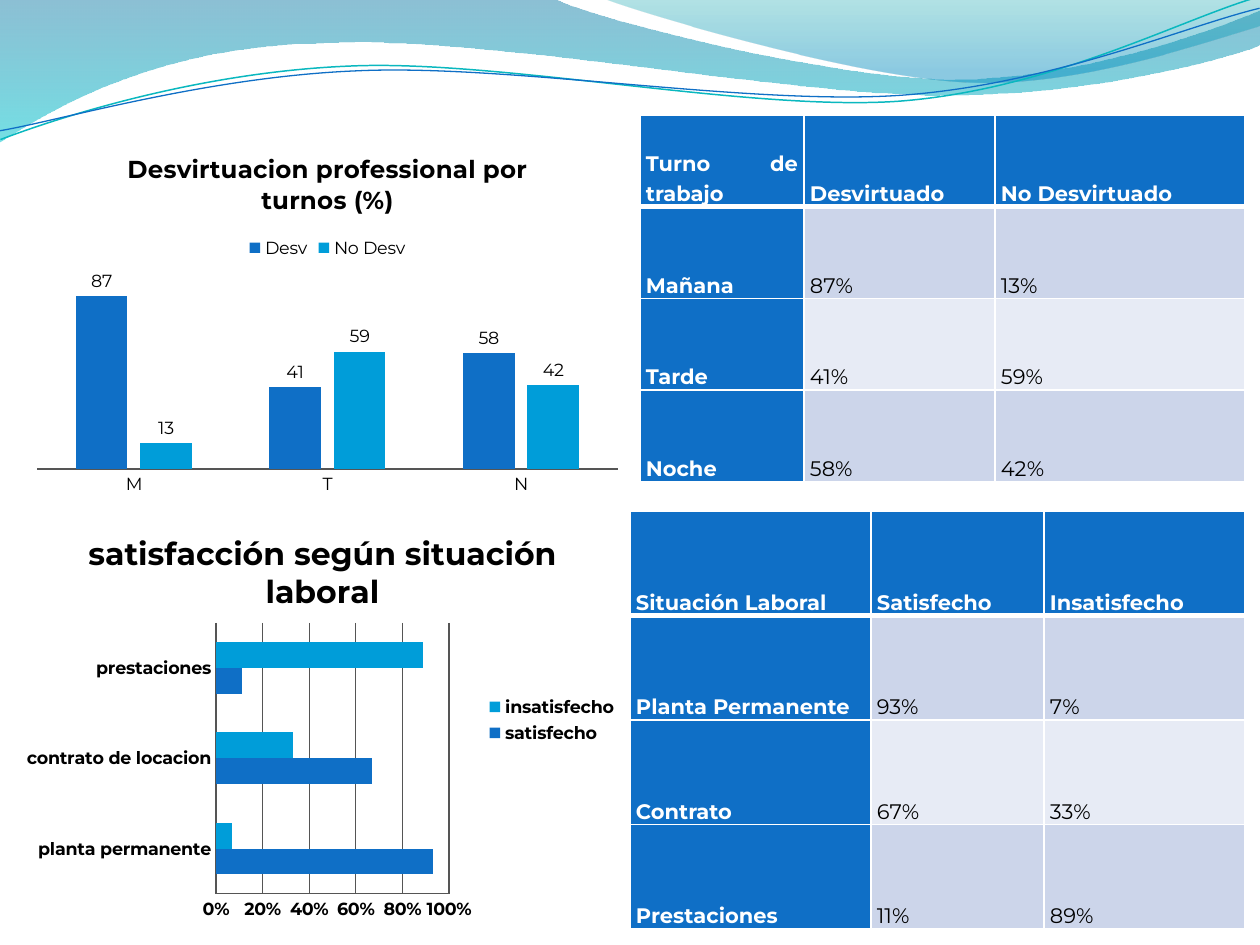
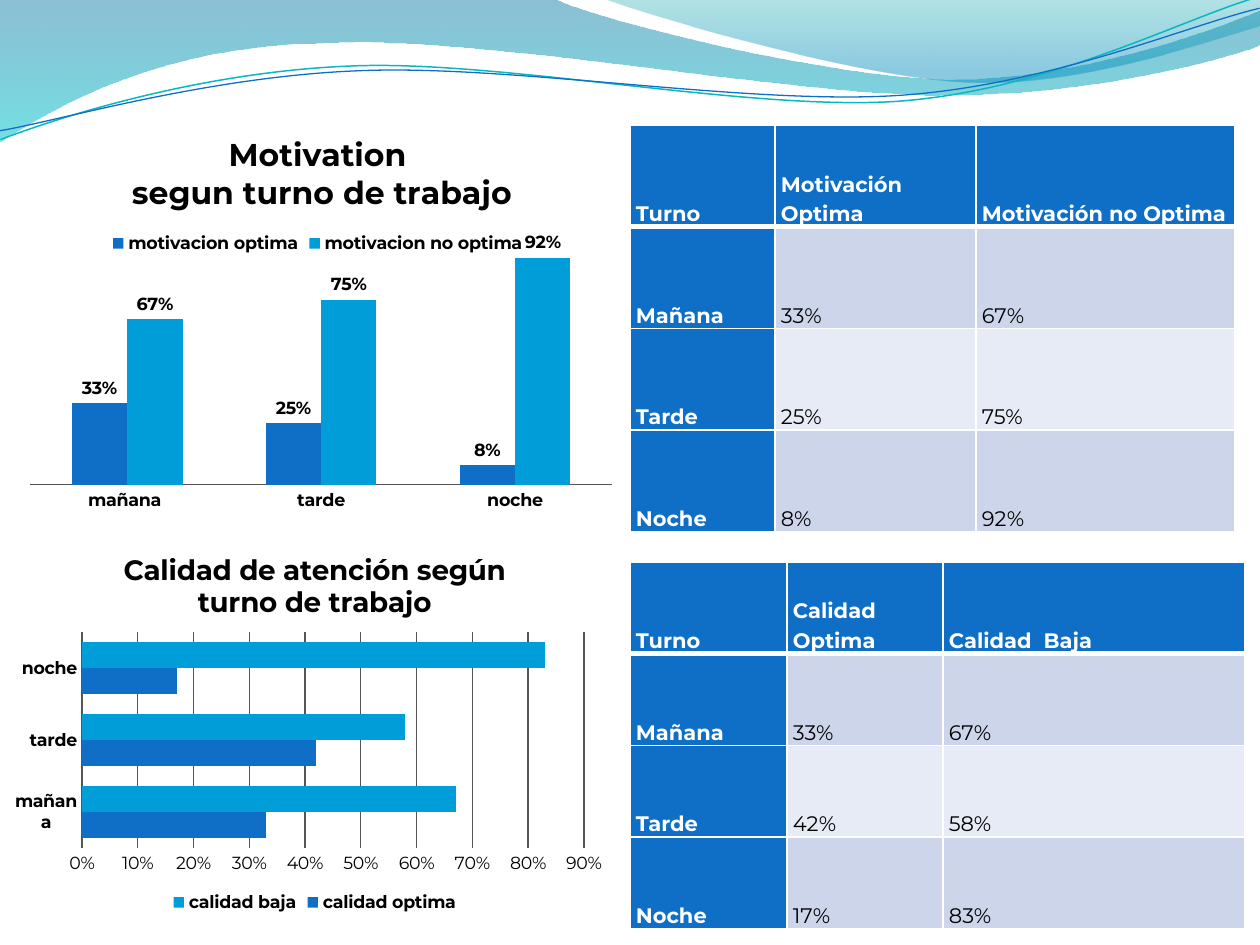
from lxml.etree import SubElement
from pptx import Presentation
from pptx.chart.data import CategoryChartData
from pptx.dml.color import RGBColor
from pptx.enum.chart import XL_CHART_TYPE, XL_LABEL_POSITION, XL_LEGEND_POSITION, XL_TICK_MARK
from pptx.enum.text import MSO_ANCHOR, PP_ALIGN
from pptx.oxml.ns import qn
from pptx.util import Emu, Pt

BLUE = RGBColor(0x0F, 0x6F, 0xC6)
SKY = RGBColor(0x00, 0x9D, 0xD9)
TEAL = RGBColor(0x0A, 0xB8, 0xBF)
DEEP = RGBColor(0x00, 0x74, 0xA1)
AQUA = RGBColor(0x00, 0xC6, 0xCF)
SEA = RGBColor(0x00, 0xA1, 0xA9)
LAKE = RGBColor(0x00, 0x8B, 0xBF)
BAND = RGBColor(0xCC, 0xD5, 0xEA)
PALE = RGBColor(0xE7, 0xEB, 0xF5)
GREY = RGBColor(0x55, 0x55, 0x55)
WHITE = RGBColor(0xFF, 0xFF, 0xFF)
BLACK = RGBColor(0x00, 0x00, 0x00)
FONT = "Montserrat"
TILT = 357.3

FILLS = [
    ([(0, 0), (554, -1), (600, 21, 837, 79, 955, 79), (1075, 79, 1207, 33, 1260, 11),
      (1261, 45), (1239, 55, 1096, 96, 940, 95), (784, 95, 481, 35, 324, 43),
      (163, 45, 58, 105, -1, 142)],
     [(0, DEEP, 45), (1, AQUA, 55)]),
    ([(604, -1), (641, 14, 859, 78, 969, 82), (1079, 87, 1211, 40, 1260, 26), (1260, 0)],
     [(0, SEA, 30), (0.8, LAKE, 45)]),
]
LINES = [
    ([(-2, 110), (59, 90, 200, 52, 350, 53), (499, 53, 745, 117, 896, 114),
      (1049, 110, 1184, 45, 1260, 27)], TEAL, 0.85),
    ([(-2, 101), (57, 94, 207, 57, 357, 58), (509, 58, 750, 112, 902, 108),
      (1052, 104, 1188, 52, 1262, 38)], BLUE, 0.75),
]


def px(num):
    return Emu(round(num * 914400 / 126))


def style(font, size=10, color=BLACK, bold=False):
    font.name = FONT
    font.size = Pt(size)
    font.bold = bold
    font.color.rgb = color


def put(frame, text, align=None, space=None, **look):
    for num, line in enumerate(text.split("\n")):
        para = frame.add_paragraph() if num else frame.paragraphs[0]
        para.alignment = align
        para.line_spacing = space
        run = para.add_run()
        run.text = line
        style(run.font, **look)


def bend(shape, parts):
    track = shape.element.find(".//" + qn("a:path"))
    legs = iter(track.findall(qn("a:lnTo")))
    for part in parts:
        leg = next(legs)
        if len(part) == 6:
            curve = SubElement(track, qn("a:cubicBezTo"))
            leg.addprevious(curve)
            for node in (leg, next(legs), next(legs)):
                curve.append(node[0])
                track.remove(node)


def outline(slide, parts, close):
    dots = [(px(p[k]), px(p[k + 1])) for p in parts for k in range(0, len(p), 2)]
    pen = slide.shapes.build_freeform(*dots[0], scale=1.0)
    pen.add_line_segments(dots[1:], close=close)
    shape = pen.convert_to_shape()
    shape.shadow.inherit = False
    bend(shape, parts[1:])
    return shape


def waves(slide, master):
    shapes = []
    for parts, tones in FILLS:
        shape = outline(slide, parts, True)
        shape.line.fill.background()
        shape.fill.gradient()
        shape.fill.gradient_angle = 270
        for stop, (place, color, _) in zip(shape.fill.gradient_stops, tones):
            stop.position = place
            stop.color.rgb = color
        for node, tone in zip(shape.element.iter(qn("a:srgbClr")), tones):
            SubElement(node, qn("a:alpha"), val=str(tone[2] * 1000))
        shapes.append(shape)
    for parts, color, width in LINES:
        shape = outline(slide, parts, False)
        shape.fill.background()
        shape.line.color.rgb = color
        shape.line.width = Pt(width)
        shape.rotation = TILT
        shapes.append(shape)
    for num, shape in enumerate(shapes):
        shape.element.nvSpPr.cNvPr.set("id", str(100 + num))
        master.shapes.element.append(shape.element)


def border(cell, row):
    props = cell._tc.get_or_add_tcPr()
    widths = {"L": 1, "R": 1, "T": 3 if row == 1 else 1, "B": 3 if row == 0 else 1}
    for num, (side, width) in enumerate(widths.items()):
        line = SubElement(props, qn("a:ln" + side), w=str(Pt(width)))
        fill = SubElement(line, qn("a:solidFill"))
        SubElement(fill, qn("a:srgbClr"), val=str(WHITE))
        props.insert(num, line)


def grid(slide, box, cols, rows, align=PP_ALIGN.JUSTIFY):
    frame = slide.shapes.add_table(len(rows), len(cols), *map(px, box))
    table = frame.table
    table.first_row = table.horz_banding = False
    for col, width in zip(table.columns, cols):
        col.width = px(width)
    for r, words in enumerate(rows):
        table.rows[r].height = px(box[3] / len(rows))
        for c, word in enumerate(words):
            cell = table.cell(r, c)
            head = r == 0 or c == 0
            cell.fill.solid()
            cell.fill.fore_color.rgb = BLUE if head else BAND if r % 2 else PALE
            cell.margin_left = cell.margin_right = px(6)
            cell.margin_top = cell.margin_bottom = 0
            cell.vertical_anchor = MSO_ANCHOR.BOTTOM
            put(cell.text_frame, word, align=align, space=1.15, size=12,
                color=WHITE if head else BLACK, bold=head)
            border(cell, r)


def layout(chart, box, plot):
    area = chart.element.find(".//" + qn("c:plotArea"))
    for old in area.findall(qn("c:layout")):
        area.remove(old)
    outer = SubElement(area, qn("c:layout"))
    area.insert(0, outer)
    inner = SubElement(outer, qn("c:manualLayout"))
    SubElement(inner, qn("c:layoutTarget"), val="inner")
    for key in "xy":
        SubElement(inner, qn(f"c:{key}Mode"), val="edge")
    for key, part, whole in zip("xywh", plot, box[2:] * 2):
        SubElement(inner, qn("c:" + key), val=f"{part / whole:.3f}")


def graph(slide, box, plot, title, cats, series, legend, size=18, bars=False, bold=True,
          bold_val=True, gap=150, overlap=0, form="0%", top=1, unit=0.2, rule=True):
    data = CategoryChartData(number_format=form)
    data.categories = cats
    for name, vals in series:
        data.add_series(name, vals)
    kind = XL_CHART_TYPE.BAR_CLUSTERED if bars else XL_CHART_TYPE.COLUMN_CLUSTERED
    chart = slide.shapes.add_chart(kind, *map(px, box), data).chart
    chart.has_title = True
    put(chart.chart_title.text_frame, title, size=size, bold=True)
    chart.has_legend = True
    chart.legend.position = legend
    chart.legend.include_in_layout = False
    cat, val = chart.category_axis, chart.value_axis
    for font in (chart.font, chart.legend.font, cat.tick_labels.font):
        style(font, bold=bold)
    for axis in (cat, val):
        axis.major_tick_mark = axis.minor_tick_mark = XL_TICK_MARK.NONE
        axis.format.line.color.rgb = GREY
    val.minimum_scale, val.maximum_scale, val.major_unit = 0, top, unit
    val.has_major_gridlines = val.visible = bars
    bands = chart.plots[0]
    bands.vary_by_categories = False
    bands.gap_width, bands.overlap = gap, overlap
    for item, color in zip(bands.series, (BLUE, SKY)):
        item.format.fill.solid()
        item.format.fill.fore_color.rgb = color
    if bars:
        style(val.tick_labels.font, bold=bold_val)
        val.tick_labels.number_format = form
        val.tick_labels.number_format_is_linked = False
        val.major_gridlines.format.line.color.rgb = GREY
        if not rule:
            val.format.line.fill.background()
    else:
        bands.has_data_labels = True
        labels = bands.data_labels
        labels.show_value = True
        labels.position = XL_LABEL_POSITION.OUTSIDE_END
        labels.number_format = form
        labels.number_format_is_linked = False
        style(labels.font, bold=bold)
    layout(chart, box, plot)


def work(slide):
    graph(slide, (25, 134, 605, 367), (12, 136, 581, 199),
          "Desvirtuacion professional por turnos (%)", ["M", "T", "N"],
          [("Desv", (87, 41, 58)), ("No Desv", (13, 59, 42))], XL_LEGEND_POSITION.TOP,
          size=14, bold=False, overlap=-25, form="General", top=100, unit=20)
    grid(slide, (640, 115, 605, 367), (164, 191, 250), [
        ("Turno de trabajo", "Desvirtuado", "No Desvirtuado"),
        ("Mañana", "87%", "13%"), ("Tarde", "41%", "59%"), ("Noche", "58%", "42%")])
    graph(slide, (15, 511, 615, 418), (201, 112, 233, 271),
          "satisfacción según situación laboral",
          ["planta permanente", "contrato de locacion", "prestaciones"],
          [("satisfecho", (0.93, 0.67, 0.11)), ("insatisfecho", (0.07, 0.33, 0.89))],
          XL_LEGEND_POSITION.RIGHT, bars=True)
    grid(slide, (630, 511, 615, 418), (241, 173, 201), [
        ("Situación Laboral", "Satisfecho", "Insatisfecho"),
        ("Planta Permanente", "93%", "7%"), ("Contrato ", "67%", "33%"),
        ("Prestaciones", "11%", "89%")])


def shift(slide):
    graph(slide, (15, 115, 605, 407), (15, 123, 582, 247),
          "Motivation\n segun turno de trabajo", ["mañana ", "tarde", "noche"],
          [("motivacion optima", (0.33, 0.25, 0.08)),
           ("motivacion no optima", (0.67, 0.75, 0.92))], XL_LEGEND_POSITION.TOP)
    grid(slide, (630, 125, 605, 407), (145, 201, 259), [
        ("Turno", "Motivación Optima", "Motivación no Optima"),
        ("Mañana", "33%", "67%"), ("Tarde", "25%", "75%"), ("Noche", "8%", "92%")],
        align=PP_ALIGN.LEFT)
    graph(slide, (15, 531, 595, 387), (63, 101, 506, 216),
          "Calidad de atención según turno de trabajo", ["mañana", "tarde", "noche"],
          [("calidad optima", (0.33, 0.42, 0.17)), ("calidad baja", (0.67, 0.58, 0.83))],
          XL_LEGEND_POSITION.BOTTOM, size=16, bars=True, bold_val=False, gap=75,
          top=0.9, unit=0.1, rule=False)
    grid(slide, (630, 562, 615, 367), (157, 156, 302), [
        ("Turno", "Calidad Optima", "Calidad  Baja"),
        ("Mañana", "33%", "67%"), ("Tarde", "42%", "58%"), ("Noche", "17%", "83%")])


def main():
    deck = Presentation()
    deck.slide_width, deck.slide_height = px(1260), px(945)
    blank = deck.slide_layouts[6]
    first, second = (deck.slides.add_slide(blank) for _ in range(2))
    waves(first, deck.slide_master)
    work(first)
    shift(second)
    deck.save("out.pptx")


if __name__ == "__main__":
    main()
